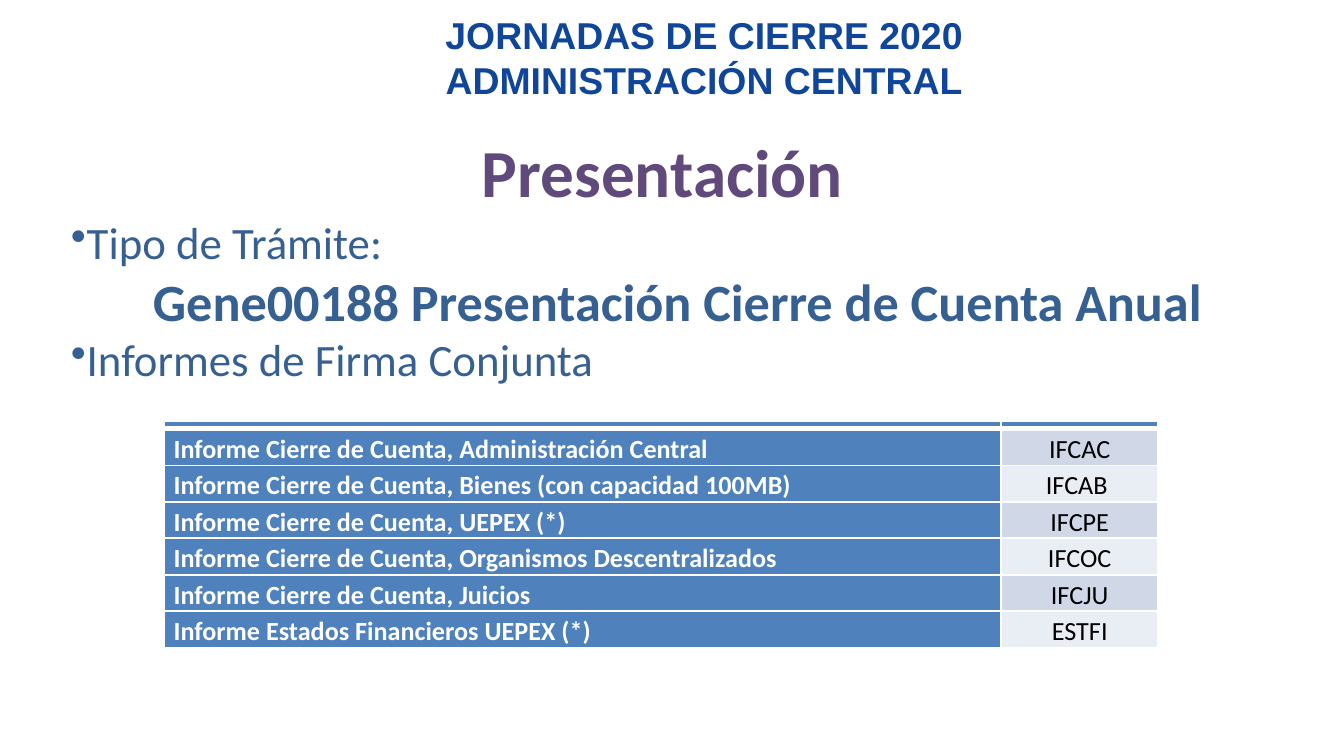
"""Builds the slide on submitting the annual closing of accounts."""
from dataclasses import dataclass

import pptx
import pptx.dml.color
import pptx.enum.text
import pptx.oxml
import pptx.oxml.ns
import pptx.util
from pptx.util import Cm


@dataclass(frozen=True)
class Theme:
    banner: str = "104699"
    title: str = "604A7B"
    body: str = "376092"
    label: str = "4F81BD"
    bands: tuple = ("D0D8E8", "E9EDF4")
    white: str = "FFFFFF"
    black: str = "000000"
    heading_font: str = "Arial"
    body_font: str = "Calibri"
    banner_size: int = 20
    title_size: int = 36
    bullet_size: int = 24
    key_size: int = 28
    table_size: int = 14


def write(p, text, align, font, size, color, bold):
    p.text = text
    p.alignment = align
    for r in p.runs:
        r.font.name = font
        r.font.size = pptx.util.Pt(size)
        r.font.bold = bold
        r.font.color.rgb = pptx.dml.color.RGBColor.from_string(color)


def style_cell(cell, fill, bottom):
    tc_pr = cell._tc.get_or_add_tcPr()
    for side, width in (("L", 1), ("R", 1), ("T", 1), ("B", bottom)):
        tc_pr.append(pptx.oxml.parse_xml(
            f'<a:ln{side} {pptx.oxml.ns.nsdecls("a")} w="{pptx.util.Pt(width)}">'
            f'<a:solidFill><a:srgbClr val="{theme.white}"/></a:solidFill></a:ln{side}>'))
    cell.fill.solid()
    cell.fill.fore_color.rgb = pptx.dml.color.RGBColor.from_string(fill)
    cell.margin_left = cell.margin_right = Cm(0.18)
    cell.margin_top = cell.margin_bottom = 0


theme = Theme()
align = pptx.enum.text.PP_ALIGN
anchor = pptx.enum.text.MSO_ANCHOR

prs = pptx.Presentation()
prs.slide_width, prs.slide_height = Cm(25.4), Cm(14.28)
s = prs.slides.add_slide(prs.slide_layouts[5])

banner = s.shapes.add_textbox(Cm(3.71), Cm(0.18), Cm(19.2), Cm(1.8))
tf = banner.text_frame
tf.word_wrap = True
tf.vertical_anchor = anchor.MIDDLE
tf.text = "JORNADAS DE CIERRE 2020\nADMINISTRACIÓN CENTRAL"
for p in tf.paragraphs:
    write(p, p.text, align.CENTER, theme.heading_font, theme.banner_size, theme.banner, True)

title = s.shapes.title
title.left, title.top, title.width, title.height = Cm(1.09), Cm(2.34), Cm(22.86), Cm(1.47)
tf = title.text_frame
tf.vertical_anchor = anchor.TOP
tf.auto_size = pptx.enum.text.MSO_AUTO_SIZE.NONE
write(tf.paragraphs[0], "Presentación", align.CENTER, theme.body_font,
      theme.title_size, theme.title, True)

body = s.shapes.add_textbox(Cm(1.09), Cm(3.94), Cm(23.42), Cm(8.74))
tf = body.text_frame
tf.word_wrap = True
lines = [
    ("Tipo de Trámite: ", False),
    ("Gene00188 Presentación Cierre de Cuenta Anual", True),
    ("Informes de Firma Conjunta", False),
]
for i, (text, key) in enumerate(lines):
    p = tf.paragraphs[0] if i == 0 else tf.add_paragraph()
    if not key:
        p._p.get_or_add_pPr().append(pptx.oxml.parse_xml(
            f'<a:buChar {pptx.oxml.ns.nsdecls("a")} char="•"/>'))
    write(p, text, align.CENTER if key else align.JUSTIFY, theme.body_font,
          theme.key_size if key else theme.bullet_size, theme.body, key)

reports = [
    ("Informe Cierre de Cuenta, Administración Central", "IFCAC"),
    ("Informe Cierre de Cuenta, Bienes (con capacidad 100MB)", "IFCAB "),
    ("Informe Cierre de Cuenta, UEPEX (*)", "IFCPE"),
    ("Informe Cierre de Cuenta, Organismos Descentralizados", "IFCOC"),
    ("Informe Cierre de Cuenta, Juicios", "IFCJU"),
    ("Informe Estados Financieros UEPEX (*)", "ESTFI"),
]
header_height, row_height = Cm(0.15), Cm(0.69)
table = s.shapes.add_table(len(reports) + 1, 2, Cm(3.1), Cm(7.95), Cm(18.79),
                           header_height + row_height * len(reports)).table
table.columns[0].width, table.columns[1].width = Cm(15.82), Cm(2.97)
table.rows[0].height = header_height
for cell in table.rows[0].cells:
    style_cell(cell, theme.label, 3)
    cell.text_frame.paragraphs[0]._p.append(pptx.oxml.parse_xml(
        f'<a:endParaRPr {pptx.oxml.ns.nsdecls("a")} sz="100"/>'))

for i, (name, code) in enumerate(reports):
    row = table.rows[i + 1]
    row.height = row_height
    columns = [
        (name, align.JUSTIFY, theme.white, True, theme.label),
        (code, align.CENTER, theme.black, False, theme.bands[i % 2]),
    ]
    for cell, (text, side, color, bold, fill) in zip(row.cells, columns):
        style_cell(cell, fill, 1)
        p = cell.text_frame.paragraphs[0]
        write(p, text, side, theme.body_font, theme.table_size, color, bold)
        p.line_spacing = 1.15

prs.save("out.pptx")
